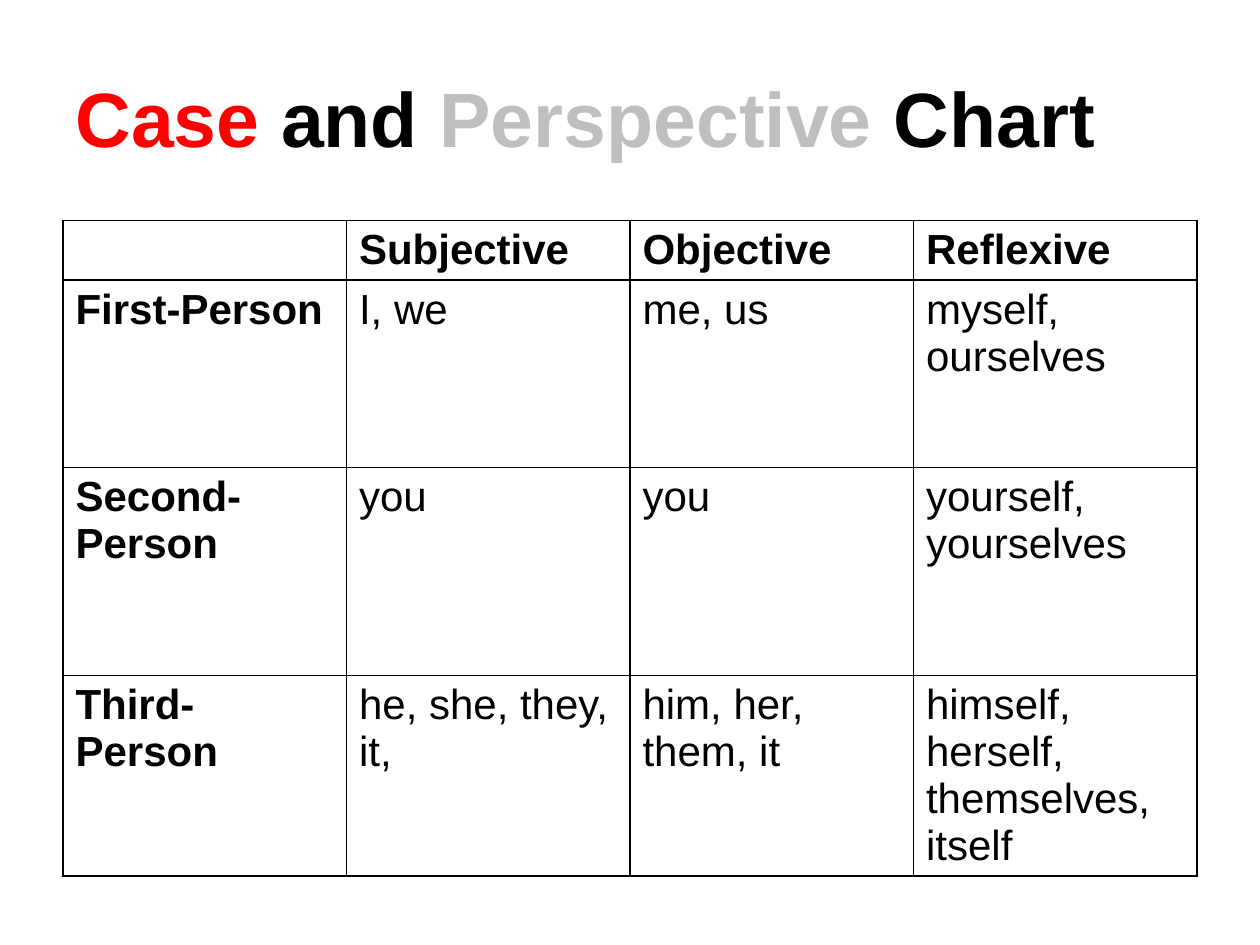
from lxml import etree
from pptx import Presentation
from pptx import util as u
from pptx.dml.color import RGBColor
from pptx.enum import text
from pptx.oxml import ns

HUES = {"ink": "000000", "case": "FF0000", "view": "BFBFBF", "page": "FFFFFF"}
FONT = "Arial"
TITLE = [("Case", "case"), (" and ", "ink"), ("Perspective", "view"), (" Chart", "ink")]
ROWS = [
    ["", "Subjective", "Objective", "Reflexive"],
    ["First-Person", "I, we", "me, us", "myself, ourselves"],
    ["Second-Person", "you", "you", "yourself, yourselves"],
    ["Third-Person", "he, she, they, it,", "him, her, them, it",
     "himself, herself, themselves, itself"],
]
HEIGHTS = [0.47, 1.49, 1.65, 1.59]
WIDTH = 2.25


def add_run(para, words, size, hue="ink", bold=False):
    run = para.add_run()
    run.text = words
    run.font.name = FONT
    run.font.size = u.Pt(size)
    run.font.bold = bold
    run.font.color.rgb = RGBColor.from_string(HUES[hue])


def add_title(slide):
    title = slide.shapes.title
    title.left, title.top = u.Inches(0.5), u.Inches(0.3)
    title.width, title.height = u.Inches(9), u.Inches(1.25)
    frame = title.text_frame
    frame.word_wrap = True
    frame.vertical_anchor = text.MSO_ANCHOR.MIDDLE
    para = frame.paragraphs[0]
    para.alignment = text.PP_ALIGN.LEFT
    for words, hue in TITLE:
        add_run(para, words, 44, hue, True)


def set_edges(cell):
    props = cell._tc.get_or_add_tcPr()
    for spot, side in enumerate(("lnL", "lnR", "lnT", "lnB")):
        line = etree.Element(ns.qn("a:" + side), w=str(u.Pt(1)))
        fill = etree.SubElement(line, ns.qn("a:solidFill"))
        etree.SubElement(fill, ns.qn("a:srgbClr"), val=HUES["ink"])
        props.insert(spot, line)


def add_grid(slide):
    frame = slide.shapes.add_table(
        len(ROWS), len(ROWS[0]), u.Inches(0.5), u.Inches(1.75),
        u.Inches(WIDTH * len(ROWS[0])), u.Inches(sum(HEIGHTS)))
    grid = frame.table
    grid.horz_banding = False
    for col in grid.columns:
        col.width = u.Inches(WIDTH)
    for r, (row, height) in enumerate(zip(ROWS, HEIGHTS)):
        grid.rows[r].height = u.Inches(height)
        for c, words in enumerate(row):
            cell = grid.cell(r, c)
            cell.fill.solid()
            cell.fill.fore_color.rgb = RGBColor.from_string(HUES["page"])
            set_edges(cell)
            if words:
                add_run(cell.text_frame.paragraphs[0], words, 24,
                        bold=r == 0 or c == 0)


def main():
    deck = Presentation()
    deck.slide_width, deck.slide_height = u.Inches(10), u.Inches(7.5)
    slide = deck.slides.add_slide(deck.slide_layouts[5])
    add_title(slide)
    add_grid(slide)
    deck.save("out.pptx")


if __name__ == "__main__":
    main()
